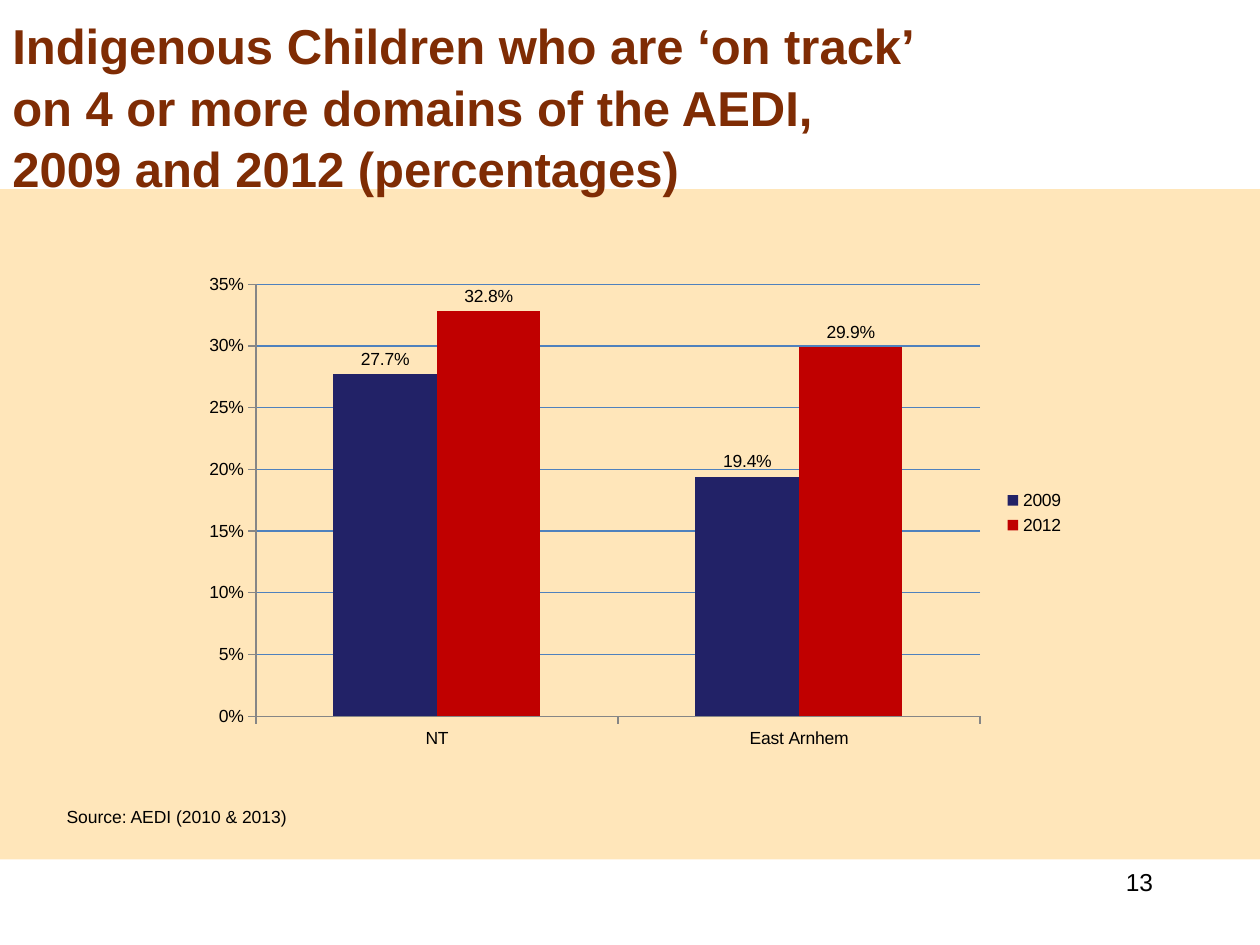
from lxml.etree import SubElement
from pptx import Presentation
from pptx.chart.data import CategoryChartData
from pptx.dml.color import RGBColor
from pptx.enum.chart import XL_CHART_TYPE, XL_LABEL_POSITION, XL_LEGEND_POSITION, XL_TICK_MARK
from pptx.enum.shapes import MSO_SHAPE
from pptx.enum.text import PP_ALIGN
from pptx.oxml import parse_xml
from pptx.oxml.ns import nsdecls, qn
from pptx.util import Inches, Pt

WIDE, HIGH = Inches(10), Inches(7.5)
FONT = "Arial"
SAND = RGBColor(0xFF, 0xD8, 0x90)
RUST = RGBColor(0x7F, 0x2C, 0x04)
BLACK = RGBColor(0, 0, 0)
BLUE = RGBColor(0x4F, 0x81, 0xBD)
GREY = RGBColor(0x86, 0x86, 0x86)
NAVY = RGBColor(0x22, 0x22, 0x67)
RED = RGBColor(0xC0, 0, 0)

TITLE = ("Indigenous Children who are ‘on track’",
         "on 4 or more domains of the AEDI,",
         "2009 and 2012 (percentages)")
PLACES = ("NT", "East Arnhem")
YEARS = (("2009", (0.277, 0.194), NAVY), ("2012", (0.328, 0.299), RED))


def inch(*box):
    return [Inches(n) for n in box]


def style(font, size, color, bold=False):
    font.name, font.size, font.bold = FONT, Pt(size), bold
    font.color.rgb = color


def add_band(slide, box, color, alpha):
    """Add a plain panel; alpha is its opacity in percent."""
    band = slide.shapes.add_shape(MSO_SHAPE.RECTANGLE, *box)
    band.shadow.inherit = False
    band.line.fill.background()
    band.fill.solid()
    band.fill.fore_color.rgb = color
    tint = band.fill._xPr.find(".//" + qn("a:srgbClr"))
    SubElement(tint, qn("a:alpha")).set("val", str(alpha * 1000))


def add_text(slide, box, lines, size, color=BLACK, bold=False,
             align=PP_ALIGN.LEFT, space=1.0):
    frame = slide.shapes.add_textbox(*box).text_frame
    frame.word_wrap = True
    frame.text = "\n".join(lines)
    for para in frame.paragraphs:
        para.alignment, para.line_spacing = align, space
        for run in para.runs:
            style(run.font, size, color, bold)


def set_plot(chart, left, top, wide, high):
    """Fix the inner plot area, in shares of the chart's size."""
    area = chart._chartSpace.chart.plotArea
    for old in area.findall(qn("c:layout")):
        area.remove(old)
    sizes = "".join(f'<c:{tag} val="{val}"/>' for tag, val in
                    zip("xywh", (left, top, wide, high)))
    area.insert(0, parse_xml(
        f'<c:layout {nsdecls("c")}><c:manualLayout>'
        '<c:layoutTarget val="inner"/><c:xMode val="edge"/>'
        f'<c:yMode val="edge"/>{sizes}</c:manualLayout></c:layout>'))


def add_bars(slide, box):
    data = CategoryChartData(number_format="0.0%")
    data.categories = PLACES
    for name, vals, _ in YEARS:
        data.add_series(name, vals)
    chart = slide.shapes.add_chart(
        XL_CHART_TYPE.COLUMN_CLUSTERED, *box, data).chart
    style(chart.font, 10, BLACK)
    chart.has_title = False
    chart.has_legend = True
    chart.legend.position = XL_LEGEND_POSITION.RIGHT
    chart.legend.include_in_layout = False
    set_plot(chart, 0.07, 0.04, 0.82, 0.87)

    for axis in (chart.category_axis, chart.value_axis):
        axis.major_tick_mark = XL_TICK_MARK.OUTSIDE
        axis.format.line.color.rgb = GREY
        axis.format.line.width = Pt(0.75)
    axis = chart.value_axis
    axis.minimum_scale, axis.maximum_scale, axis.major_unit = 0, 0.35, 0.05
    axis.tick_labels.number_format = "0%"
    axis.tick_labels.number_format_is_linked = False
    axis.has_major_gridlines = True
    grid = axis.major_gridlines.format.line
    grid.color.rgb, grid.width = BLUE, Pt(0.75)

    plot = chart.plots[0]
    plot.gap_width, plot.overlap, plot.vary_by_categories = 150, 0, False
    for bars, (_, _, color) in zip(plot.series, YEARS):
        bars.format.fill.solid()
        bars.format.fill.fore_color.rgb = color
        tags = bars.data_labels
        tags.show_value = True
        tags.position = XL_LABEL_POSITION.OUTSIDE_END
        tags.number_format = "0.0%"
        tags.number_format_is_linked = False
        style(tags.font, 10, BLACK)


def main():
    deck = Presentation()
    deck.slide_width, deck.slide_height = WIDE, HIGH
    slide = deck.slides.add_slide(deck.slide_layouts[6])
    add_band(slide, inch(0, 1.5, 10, 5.32), SAND, 62)
    add_text(slide, inch(0, 0.05, 7.91, 1.51), TITLE, 28, RUST,
             bold=True, space=1.05)
    add_text(slide, inch(7.17, 6.83, 2.08, 0.5), ["13"], 14,
             align=PP_ALIGN.RIGHT)
    add_text(slide, inch(0.43, 6.35, 7.98, 0.42),
             ["Source: AEDI (2010 & 2013)"], 10)
    add_bars(slide, inch(1.54, 2.1, 7.01, 3.94))
    deck.save("out.pptx")


if __name__ == "__main__":
    main()
